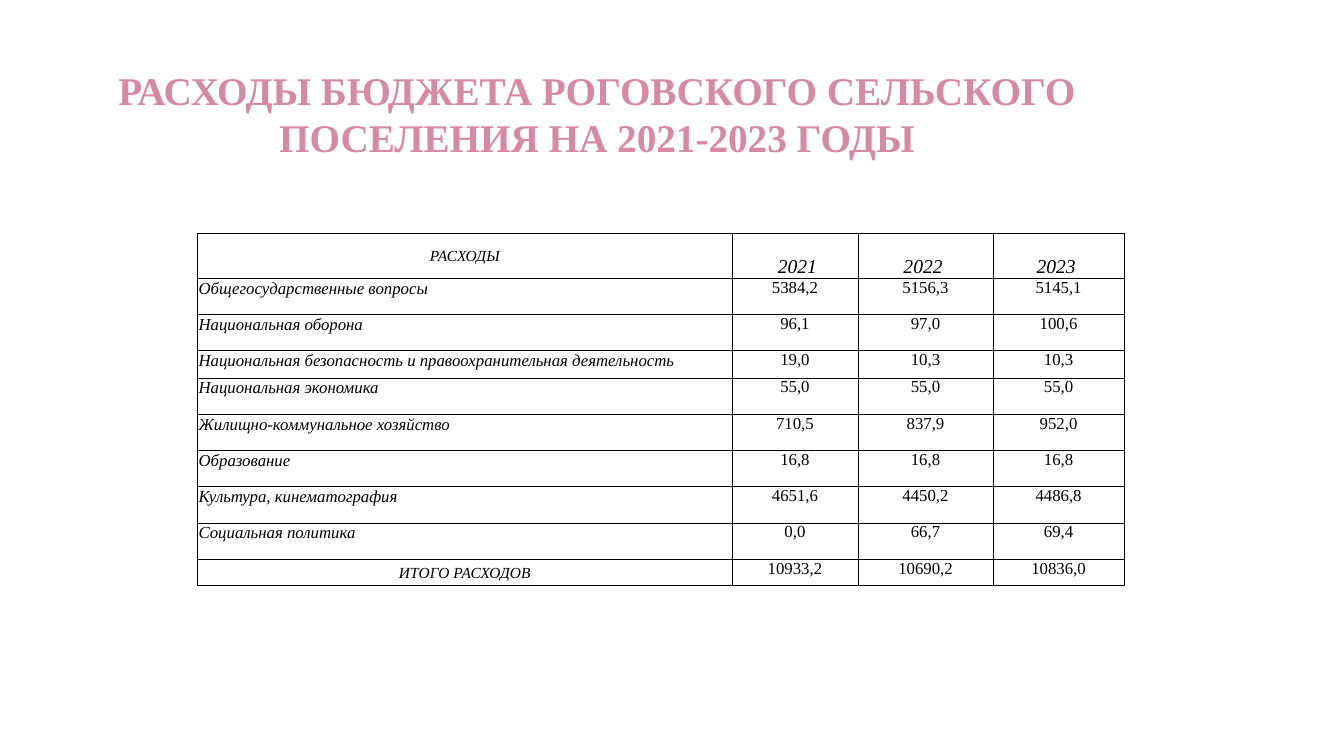
"""Build the slide with the settlement's budget expenses for 2021-2023."""
from lxml.etree import SubElement
from pptx import Presentation
from pptx.dml.color import RGBColor
from pptx.enum.text import MSO_ANCHOR, MSO_AUTO_SIZE, PP_ALIGN
from pptx.oxml.ns import qn
from pptx.util import Inches, Pt

COLORS = {"title": "D788A3", "text": "000000", "border": "000000"}
FONT = "Times New Roman"
COLUMN_WIDTHS = [5.3, 1.25, 1.34, 1.3]
ROW_HEIGHTS = [0.45, 0.36, 0.36, 0.27] + [0.36] * 5 + [0.26]
EXPENSES = [
    ("РАСХОДЫ", " 2021", "2022 ", "2023 "),
    ("Общегосударственные вопросы", "5384,2", "5156,3", "5145,1"),
    ("Национальная оборона", "96,1", "97,0", "100,6"),
    ("Национальная безопасность и правоохранительная деятельность", "19,0", "10,3", "10,3"),
    ("Национальная экономика", "55,0", "55,0", "55,0"),
    ("Жилищно-коммунальное хозяйство", "710,5", "837,9", "952,0"),
    ("Образование", "16,8", "16,8", "16,8"),
    ("Культура, кинематография", "4651,6", "4450,2", "4486,8"),
    ("Социальная политика", "0,0", "66,7", "69,4"),
    ("ИТОГО РАСХОДОВ", "10933,2", "10690,2", "10836,0"),
]


def add_text(paragraph, text, size, color, align, bold=False, italic=False):
    paragraph.alignment = align
    run = paragraph.add_run()
    run.text = text
    run.font.name = FONT
    run.font.size = Pt(size)
    run.font.bold = bold
    run.font.italic = italic
    run.font.color.rgb = RGBColor.from_string(COLORS[color])


def draw_borders(cell):
    properties = cell._tc.get_or_add_tcPr()
    for position, side in enumerate(("a:lnL", "a:lnR", "a:lnT", "a:lnB")):
        line = properties.makeelement(qn(side), {"w": str(Pt(0.5))})
        fill = SubElement(line, qn("a:solidFill"))
        SubElement(fill, qn("a:srgbClr"), val=COLORS["border"])
        properties.insert(position, line)


prs = Presentation()
prs.slide_width = Inches(13.33)
prs.slide_height = Inches(7.5)
slide = prs.slides.add_slide(prs.slide_layouts[5])

title = slide.shapes.title
title.left, title.top = Inches(0.64), Inches(0.34)
title.width, title.height = Inches(10.56), Inches(1.25)
heading = title.text_frame
heading.word_wrap = True
heading.auto_size = MSO_AUTO_SIZE.NONE
heading.vertical_anchor = MSO_ANCHOR.BOTTOM
heading.margin_left = heading.margin_right = Inches(0.05)
heading.margin_top = heading.margin_bottom = 0
add_text(heading.paragraphs[0], "РАСХОДЫ БЮДЖЕТА РОГОВСКОГО СЕЛЬСКОГО ПОСЕЛЕНИЯ НА 2021-2023 ГОДЫ",
         28, "title", PP_ALIGN.CENTER, bold=True)

expenses = slide.shapes.add_table(
    len(ROW_HEIGHTS), len(COLUMN_WIDTHS), Inches(1.96), Inches(2.31),
    Inches(sum(COLUMN_WIDTHS)), Inches(sum(ROW_HEIGHTS))).table
expenses.first_row = expenses.horz_banding = False
for column, width in zip(expenses.columns, COLUMN_WIDTHS):
    column.width = Inches(width)
for row, height in zip(expenses.rows, ROW_HEIGHTS):
    row.height = Inches(height)

last_row = len(EXPENSES) - 1
for row_index, values in enumerate(EXPENSES):
    for column_index, value in enumerate(values):
        is_header = row_index == 0
        is_label = column_index == 0
        is_caption = is_label and row_index in (0, last_row)
        is_amount = not is_header and not is_label
        cell = expenses.cell(row_index, column_index)
        cell.margin_left = cell.margin_right = Inches(0.07 if is_amount else 0.01)
        cell.margin_top = Inches(0 if is_amount else 0.01)
        cell.margin_bottom = 0
        if is_caption:
            cell.vertical_anchor, size = MSO_ANCHOR.MIDDLE, 11
        elif is_header:
            cell.vertical_anchor, size = MSO_ANCHOR.BOTTOM, 14
        else:
            cell.vertical_anchor, size = MSO_ANCHOR.TOP, 12
        align = PP_ALIGN.LEFT if is_label and not is_caption else PP_ALIGN.CENTER
        add_text(cell.text_frame.paragraphs[0], value, size, "text", align, italic=not is_amount)
        cell.fill.background()
        draw_borders(cell)

prs.save("out.pptx")
